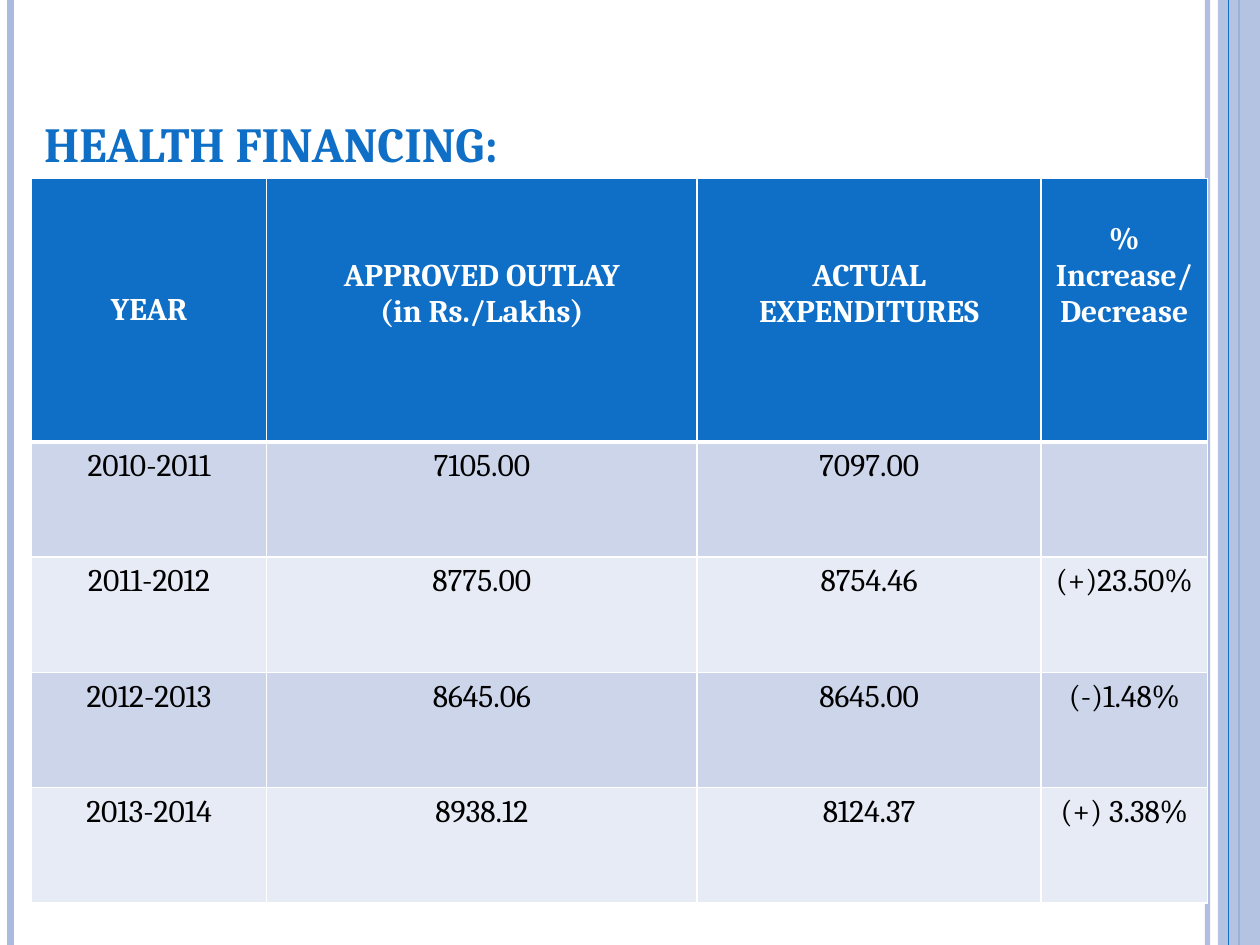
import pptx
import pptx.util
import pptx.dml.color
import pptx.enum.shapes
import pptx.enum.text
import pptx.oxml
import pptx.oxml.ns

Pt = pptx.util.Pt
Align = pptx.enum.text.PP_ALIGN
Anchor = pptx.enum.text.MSO_ANCHOR

# Content
TITLE = "HEALTH FINANCING:"
HEADERS = [  # text, lines left free above it (None: centred in the cell)
    ("YEAR", None),
    ("APPROVED OUTLAY\n(in Rs./Lakhs)", 2),
    ("ACTUAL EXPENDITURES", 2),
    ("% Increase/Decrease", 1),
]
YEARS = [
    ("2010-2011", "7105.00", "7097.00", ""),
    ("2011-2012", "8775.00", "8754.46", "(+)23.50%"),
    ("2012-2013", "8645.06", "8645.00", "(-)1.48%"),
    ("2013-2014", "8938.12", "8124.37", "(+) 3.38%"),
]

# Look
COLORS = {"blue": "0F6FC6", "pale": "ABBBDF", "band": "CCD5EA",
          "light": "E7EBF5", "white": "FFFFFF", "black": "000000"}
FONT = "Cambria"
WIDTH, HEIGHT = 720, 540
COLUMN_WIDTHS = [134.4, 246, 196.6, 95]
HEADER_HEIGHT, YEAR_HEIGHT = 150.6, 65.85
LINE_HEIGHT, CELL_MARGIN = 20.9, 3.6
RULES = [  # x, line width, colour, opacity in percent
    (690, 3, "pale", 93),
    (6, 4.5, "pale", 100),
    (708, 1.5, "blue", 100),
]
THIN_RULE = (702, 0.75, "blue", 100)


def rgb(name):
    return pptx.dml.color.RGBColor.from_string(COLORS[name])


def write(frame, text, size=18, color="black", bold=False, align=Align.CENTER):
    frame.text = text
    for paragraph in frame.paragraphs:
        paragraph.alignment = align
        font = paragraph.font
        font.name, font.size, font.bold = FONT, Pt(size), bold
        font.color.rgb = rgb(color)
        for run in paragraph.runs:
            run.font.name = FONT


def set_opacity(fill_parent, percent):
    if percent < 100:
        tint = next(fill_parent.iter(pptx.oxml.ns.qn("a:srgbClr")))
        pptx.oxml.ns.qn("a:alpha")
        tint.append(pptx.oxml.parse_xml(
            f'<a:alpha {pptx.oxml.ns.nsdecls("a")} val="{percent * 1000}"/>'))


def add_rule(x, width, color, opacity):
    rule = slide.shapes.add_connector(
        pptx.enum.shapes.MSO_CONNECTOR.STRAIGHT, Pt(x), 0, Pt(x), Pt(HEIGHT))
    rule.line.width = Pt(width)
    rule.line.color.rgb = rgb(color)
    properties = rule._element.spPr
    set_opacity(properties, opacity)
    properties.append(pptx.oxml.parse_xml(
        f'<a:effectLst {pptx.oxml.ns.nsdecls("a")}/>'))


def set_borders(cell, **widths):
    properties = cell._tc.get_or_add_tcPr()
    for place, (side, width) in enumerate(widths.items()):
        properties.insert(place, pptx.oxml.parse_xml(
            f'<a:ln{side} {pptx.oxml.ns.nsdecls("a")} w="{Pt(width)}">'
            f'<a:solidFill><a:srgbClr val="{COLORS["white"]}"/></a:solidFill>'
            f'</a:ln{side}>'))


def fill_cell(cell, text, background, top=1, bottom=1, **style):
    cell.fill.solid()
    cell.fill.fore_color.rgb = rgb(background)
    set_borders(cell, L=1, R=1, T=top, B=bottom)
    write(cell.text_frame, text, **style)


presentation = pptx.Presentation()
presentation.slide_width, presentation.slide_height = Pt(WIDTH), Pt(HEIGHT)
slide = presentation.slides.add_slide(presentation.slide_layouts[5])

# Side rules and the right-hand band
for rule_values in RULES:
    add_rule(*rule_values)
band = slide.shapes.add_shape(pptx.enum.shapes.MSO_SHAPE.RECTANGLE,
                              Pt(696), 0, Pt(24), Pt(HEIGHT))
band.shadow.inherit = False
band.fill.solid()
band.fill.fore_color.rgb = rgb("pale")
band.line.fill.background()
set_opacity(band._element.spPr, 87)
add_rule(*THIN_RULE)

# Title
title = slide.shapes.title
title.left, title.top, title.width, title.height = Pt(18), Pt(12), Pt(660), Pt(90)
title.text_frame.vertical_anchor = Anchor.BOTTOM
write(title.text_frame, TITLE, size=28, color="blue", bold=True, align=Align.LEFT)

# Financing table
financing = slide.shapes.add_table(
    len(YEARS) + 1, len(HEADERS), Pt(18), Pt(102), Pt(sum(COLUMN_WIDTHS)),
    Pt(HEADER_HEIGHT + YEAR_HEIGHT * len(YEARS))).table
for column, width in zip(financing.columns, COLUMN_WIDTHS):
    column.width = Pt(width)
for number, row in enumerate(financing.rows):
    row.height = Pt(YEAR_HEIGHT if number else HEADER_HEIGHT)

for column, (heading, free_lines) in enumerate(HEADERS):
    cell = financing.cell(0, column)
    fill_cell(cell, heading, "blue", bottom=3, color="white", bold=True)
    if free_lines is None:
        cell.vertical_anchor = Anchor.MIDDLE
    else:
        cell.margin_top = Pt(CELL_MARGIN + free_lines * LINE_HEIGHT)

for number, values in enumerate(YEARS, start=1):
    for column, value in enumerate(values):
        fill_cell(financing.cell(number, column), value,
                  "band" if number % 2 else "light", top=3 if number == 1 else 1)

presentation.save("out.pptx")
